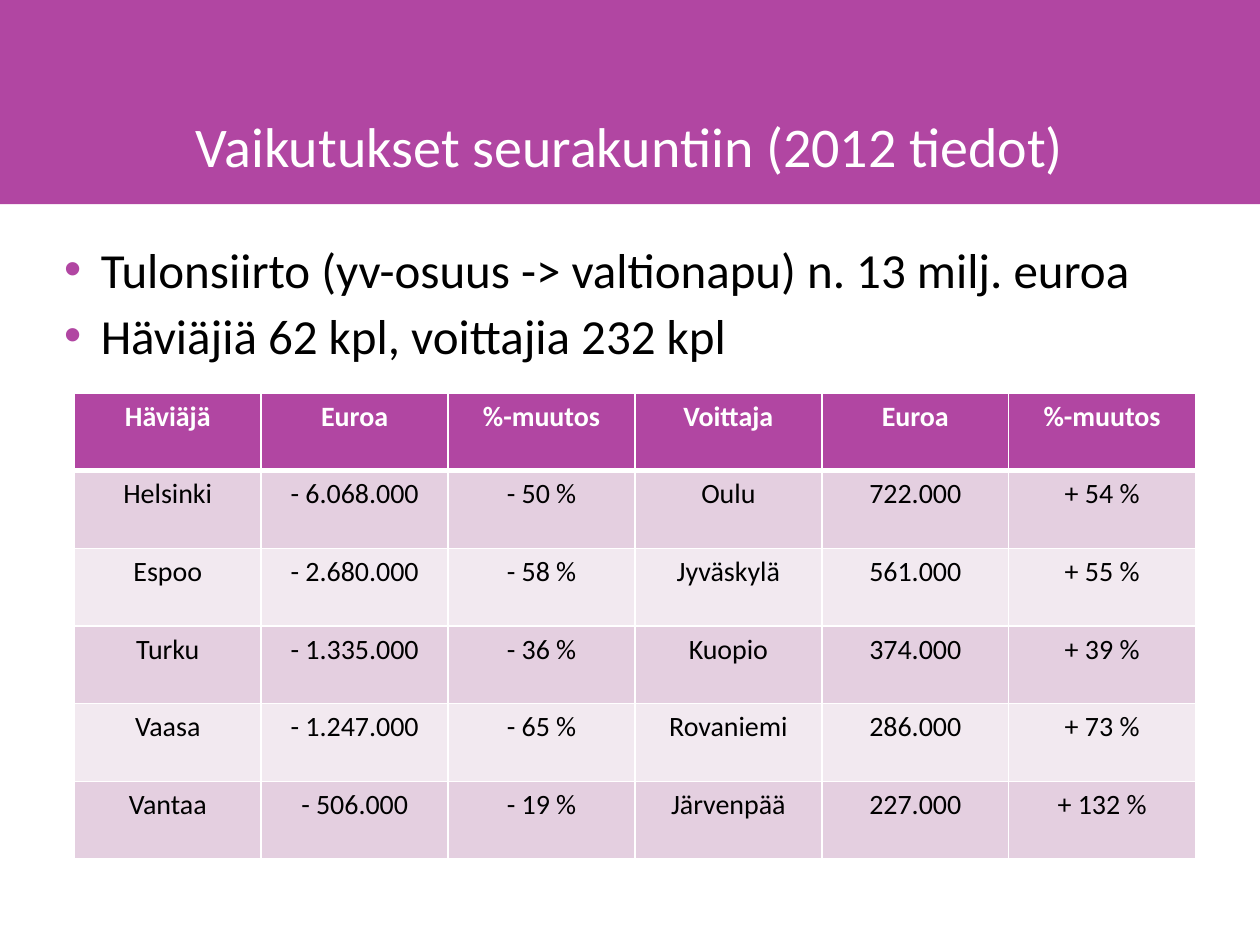
from lxml import etree
from pptx import Presentation
from pptx import util as u
from pptx.dml.color import RGBColor
from pptx.enum import shapes, text
from pptx.oxml.ns import qn

TITLE = "Vaikutukset seurakuntiin (2012 tiedot)"
BULLETS = [
    "Tulonsiirto (yv-osuus -> valtionapu) n. 13 milj. euroa",
    "Häviäjiä 62 kpl, voittajia 232 kpl",
]
ROWS = [
    ("Häviäjä", "Euroa", "%-muutos", "Voittaja", "Euroa", "%-muutos"),
    ("Helsinki", "- 6.068.000", "- 50 %", "Oulu", "722.000", "+ 54 %"),
    ("Espoo", "- 2.680.000", "- 58 %", "Jyväskylä", "561.000", "+ 55 %"),
    ("Turku", "- 1.335.000", "- 36 %", "Kuopio", "374.000", "+ 39 %"),
    ("Vaasa", "- 1.247.000", "- 65 %", "Rovaniemi", "286.000", "+ 73 %"),
    ("Vantaa", "- 506.000", "- 19 %", "Järvenpää", "227.000", "+ 132 %"),
]
COLORS = {"accent": "B146A2", "dark_band": "E4CFE0", "light_band": "F2E9F0",
          "white": "FFFFFF", "black": "000000"}
WIDTH, HEIGHT = u.Inches(10), u.Inches(7.5)
MARGIN = 0.043
TABLE = {"left": 0.059, "top": 0.416, "width": 0.89, "height": 0.493}
CENTER = text.PP_ALIGN.CENTER


def color(name):
    return RGBColor.from_string(COLORS[name])


def paint(fill, name):
    fill.solid()
    fill.fore_color.rgb = color(name)


def box(left, top, width, height):
    return [int(WIDTH * left), int(HEIGHT * top), int(WIDTH * width), int(HEIGHT * height)]


def apply(target, values):
    for name, value in values.items():
        setattr(target, name, value)


def write(paragraph, content, size, color_name, bold=False, **layout):
    paragraph.text = content
    apply(paragraph, layout)
    apply(paragraph.font, {"name": "Calibri", "size": u.Pt(size), "bold": bold})
    paragraph.font.color.rgb = color(color_name)


def add_text_frame(slide, area, inset, anchor):
    frame = slide.shapes.add_textbox(*box(*area)).text_frame
    apply(frame, {"word_wrap": True, "vertical_anchor": anchor,
                  "margin_left": u.Inches(inset), "margin_right": u.Inches(inset),
                  "margin_top": u.Inches(0.04), "margin_bottom": u.Inches(0.04)})
    return frame


def add_bullet(paragraph):
    properties = paragraph._p.get_or_add_pPr()
    indent = u.Inches(0.29)
    properties.set("marL", str(indent))
    properties.set("indent", str(-indent))
    bullet_color = etree.SubElement(properties, qn("a:buClr"))
    etree.SubElement(bullet_color, qn("a:srgbClr"), val=COLORS["accent"])
    etree.SubElement(properties, qn("a:buFont"), typeface="Arial")
    etree.SubElement(properties, qn("a:buChar"), char="•")


def add_borders(cell, row):
    widths = {"L": 1, "R": 1, "T": 3 if row == 1 else 1, "B": 3 if row == 0 else 1}
    for side, width in widths.items():
        line = etree.SubElement(cell._tc.get_or_add_tcPr(), qn(f"a:ln{side}"), w=str(u.Pt(width)))
        fill = etree.SubElement(line, qn("a:solidFill"))
        etree.SubElement(fill, qn("a:srgbClr"), val=COLORS["white"])


def add_table(slide):
    table = slide.shapes.add_table(len(ROWS), len(ROWS[0]), *box(*TABLE.values())).table
    for row, values in enumerate(ROWS):
        header = row == 0
        band = "accent" if header else "dark_band" if row % 2 else "light_band"
        for column, value in enumerate(values):
            cell = table.cell(row, column)
            add_borders(cell, row)
            paint(cell.fill, band)
            write(cell.text_frame.paragraphs[0], value, 16,
                  "white" if header else "black", header, alignment=CENTER)


def main():
    presentation = Presentation()
    apply(presentation, {"slide_width": WIDTH, "slide_height": HEIGHT})
    slide = presentation.slides.add_slide(presentation.slide_layouts[6])

    banner = slide.shapes.add_shape(shapes.MSO_SHAPE.RECTANGLE, *box(0, 0, 1, 0.216))
    banner.shadow.inherit = False
    paint(banner.fill, "accent")
    banner.line.fill.background()

    title = add_text_frame(slide, (MARGIN, 0.048, 1 - 2 * MARGIN, 0.147), 0.31,
                           text.MSO_ANCHOR.BOTTOM)
    write(title.paragraphs[0], TITLE, 32, "white", alignment=CENTER, line_spacing=0.9)

    body = add_text_frame(slide, (MARGIN, 0.248, 1 - 2 * MARGIN, 0.64), 0.08,
                          text.MSO_ANCHOR.TOP)
    for index, bullet in enumerate(BULLETS):
        paragraph = body.add_paragraph() if index else body.paragraphs[0]
        paragraph.space_after = u.Pt(4)
        add_bullet(paragraph)
        write(paragraph, bullet, 28, "black")

    add_table(slide)
    presentation.save("out.pptx")


if __name__ == "__main__":
    main()
